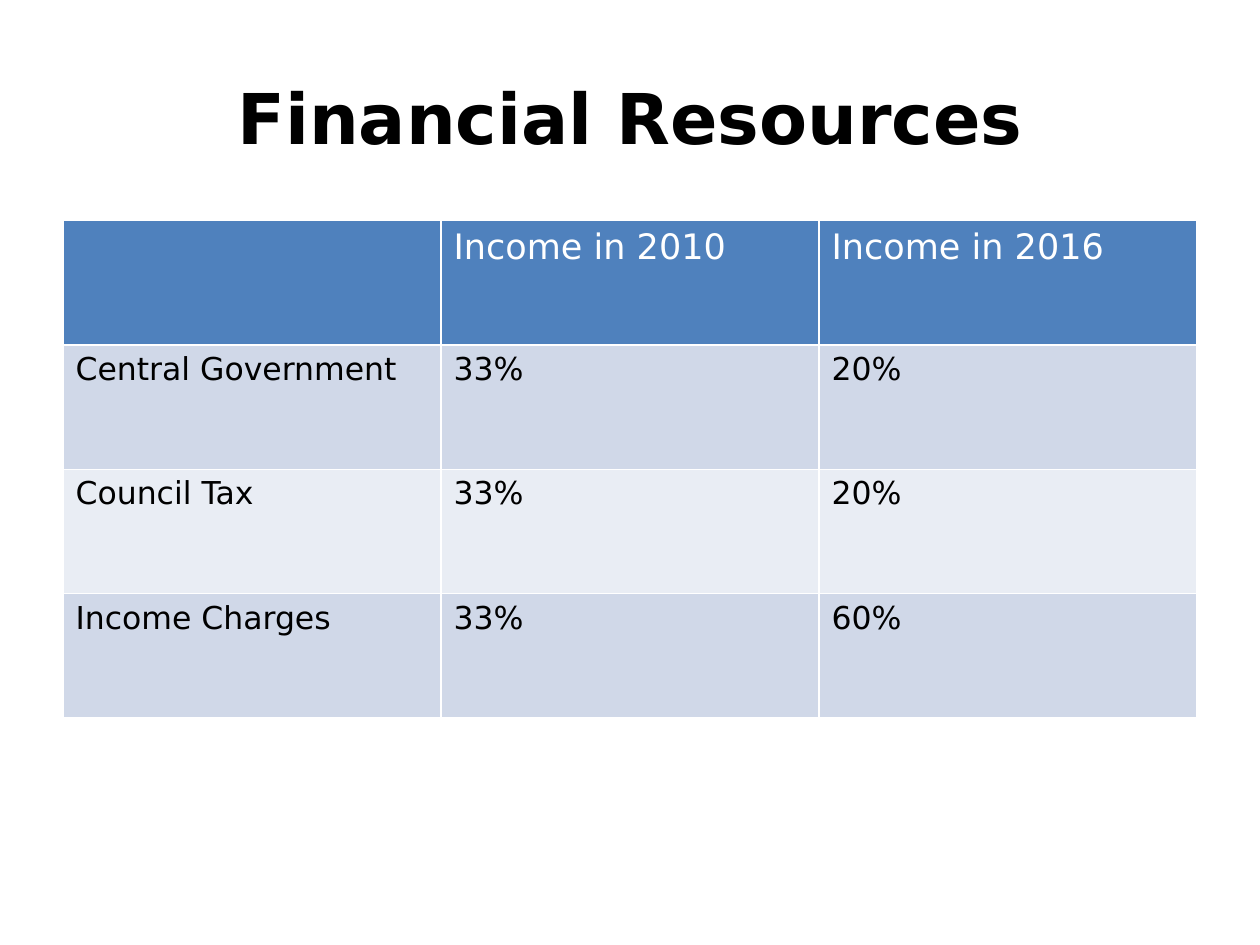
from pptx import Presentation
from pptx.dml.color import RGBColor
from pptx.enum.text import MSO_ANCHOR, PP_ALIGN
from pptx.util import Inches, Pt

MIDDLE = MSO_ANCHOR.MIDDLE
CENTER = PP_ALIGN.CENTER
TITLE_ONLY = 5

FONT = "DejaVu Sans"
BLACK = RGBColor(0x00, 0x00, 0x00)
WHITE = RGBColor(0xFF, 0xFF, 0xFF)
BLUE = RGBColor(0x4F, 0x81, 0xBD)
BANDS = (RGBColor(0xD0, 0xD8, 0xE8), RGBColor(0xE9, 0xED, 0xF4))

INCOME = [
    ("", "Income in 2010", "Income in 2016"),
    ("Central Government", "33%", "20%"),
    ("Council Tax", "33%", "20%"),
    ("Income Charges", "33%", "60%"),
]


def set_font(para, size, color, bold=False):
    font = para.font
    font.name = FONT
    font.size = Pt(size)
    font.bold = bold
    font.color.rgb = color


def add_title(slide, text, left, top, width, height):
    title = slide.shapes.title
    title.left, title.top = Inches(left), Inches(top)
    title.width, title.height = Inches(width), Inches(height)
    frame = title.text_frame
    frame.text = text
    frame.vertical_anchor = MIDDLE
    para = frame.paragraphs[0]
    para.alignment = CENTER
    set_font(para, 40, BLACK, bold=True)


def add_income(slide, rows, left, top, width, height):
    # The default table style draws the white cell borders
    table = slide.shapes.add_table(
        len(rows), len(rows[0]),
        Inches(left), Inches(top), Inches(width), Inches(height),
    ).table
    for r, row in enumerate(rows):
        header = r == 0
        fill = BLUE if header else BANDS[(r - 1) % 2]
        size, color = (20, WHITE) if header else (18, BLACK)
        for c, text in enumerate(row):
            cell = table.cell(r, c)
            cell.text = text
            cell.fill.solid()
            cell.fill.fore_color.rgb = fill
            set_font(cell.text_frame.paragraphs[0], size, color)


def main():
    deck = Presentation()
    deck.slide_width, deck.slide_height = Inches(10), Inches(7.5)
    slide = deck.slides.add_slide(deck.slide_layouts[TITLE_ONLY])
    add_title(slide, "Financial Resources", 0.5, 0.3, 9, 1.25)
    add_income(slide, INCOME, 0.5, 1.75, 9, 3.95)
    deck.save("out.pptx")


if __name__ == "__main__":
    main()
